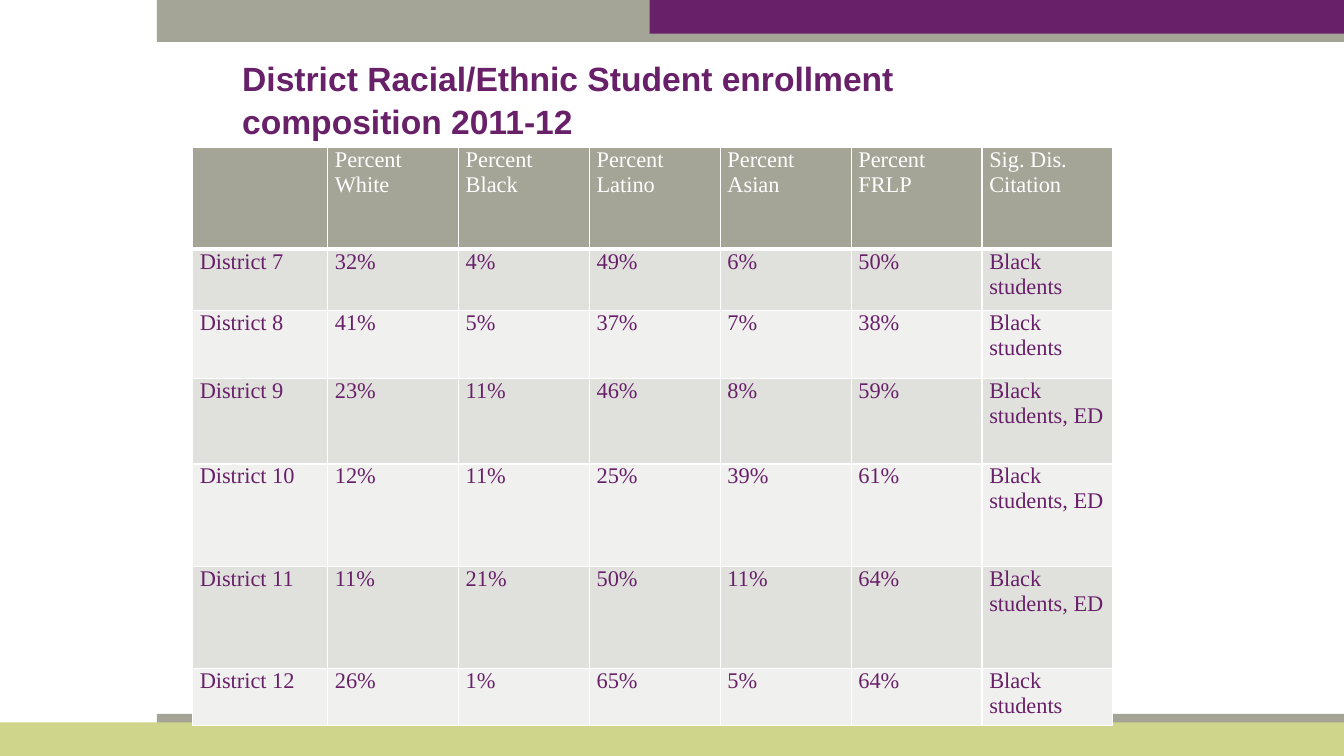
from lxml.etree import SubElement
from pptx import Presentation
from pptx.dml.color import RGBColor
from pptx.enum.shapes import MSO_SHAPE
from pptx.enum.text import MSO_ANCHOR, MSO_AUTO_SIZE, PP_ALIGN
from pptx.oxml.ns import qn
from pptx.util import Pt

GRAY, PLUM, LIME, WHITE = "A4A597", "682069", "CFD58B", "FFFFFF"
BANDS = ["E0E1DD", "F0F0EF"]
WIDE, HIGH = 960, 540

HEAD = ["", "Percent White", "Percent Black", "Percent Latino",
        "Percent Asian", "Percent FRLP", "Sig. Dis.\nCitation"]
ROWS = [
    ["District 7", "32%", "4%", "49%", "6%", "50%", "Black students"],
    ["District 8", "41%", "5%", "37%", "7%", "38%", "Black students"],
    ["District 9", "23%", "11%", "46%", "8%", "59%", "Black students, ED"],
    ["District 10", "12%", "11%", "25%", "39%", "61%", "Black students, ED"],
    ["District 11", "11%", "21%", "50%", "11%", "64%", "Black students, ED"],
    ["District 12", "26%", "1%", "65%", "5%", "64%", "Black students"],
]
COLS = [96.5] + [93.5] * 6
TALL = [72.7, 43.5, 48.6, 61.3, 73, 73, 41]


def paint(code):
    return RGBColor.from_string(code)


def write(frame, text, font="Times New Roman", size=16, color=PLUM, bold=False, lead=None):
    frame.word_wrap = True
    frame.text = text
    for para in frame.paragraphs:
        para.alignment = PP_ALIGN.LEFT
        para.line_spacing = lead
        for run in para.runs:
            run.font.name, run.font.size = font, Pt(size)
            run.font.bold, run.font.color.rgb = bold, paint(color)


def bar(slide, left, top, width, height, color):
    shape = slide.shapes.add_shape(MSO_SHAPE.RECTANGLE, Pt(left), Pt(top), Pt(width), Pt(height))
    shape.shadow.inherit = False
    shape.fill.solid()
    shape.fill.fore_color.rgb = paint(color)
    shape.line.fill.background()


def frieze(slide, left, top, width, height):
    """Draw the colour bars along the top and bottom of the slide."""
    inset, split, thick, thin = 112, 464, 30, 24
    for y in (top, top + height - thick):
        bar(slide, left + inset, y, width - inset, thick, GRAY)
    bar(slide, left, top + height - thin, width, thin, LIME)
    bar(slide, left + split, top, width - split, thin, PLUM)


def title(slide, left, top, width, height):
    box = slide.shapes.title
    box.left, box.top, box.width, box.height = Pt(left), Pt(top), Pt(width), Pt(height)
    frame = box.text_frame
    frame.margin_left = frame.margin_right = frame.margin_top = frame.margin_bottom = 0
    frame.vertical_anchor = MSO_ANCHOR.TOP
    frame.auto_size = MSO_AUTO_SIZE.NONE
    write(frame, "District Racial/Ethnic Student enrollment composition 2011-12",
          font="Arial", size=24, bold=True, lead=1.06)


def edge(cell, foot):
    """Give a cell white borders, with the bottom one foot points thick."""
    props = cell._tc.get_or_add_tcPr()
    for side, thick in zip("LRTB", (1, 1, 1, foot)):
        line = SubElement(props, qn("a:ln" + side), w=str(Pt(thick)))
        fill = SubElement(line, qn("a:solidFill"))
        SubElement(fill, qn("a:srgbClr"), val=WHITE)


def grid(slide, left, top, width, height):
    data = [HEAD] + ROWS
    table = slide.shapes.add_table(len(data), len(HEAD), Pt(left), Pt(top),
                                   Pt(width), Pt(height)).table
    for col, size in zip(table.columns, COLS):
        col.width = Pt(size)
    for r, (row, texts) in enumerate(zip(table.rows, data)):
        row.height = Pt(TALL[r])
        back = BANDS[(r - 1) % 2] if r else GRAY
        for cell, text in zip(row.cells, texts):
            edge(cell, 1 if r else 3)
            cell.margin_left = cell.margin_right = Pt(5.2)
            cell.margin_top = cell.margin_bottom = 0
            cell.fill.solid()
            cell.fill.fore_color.rgb = paint(back)
            write(cell.text_frame, text, color=PLUM if r else WHITE)


def main():
    deck = Presentation()
    deck.slide_width, deck.slide_height = Pt(WIDE), Pt(HIGH)
    slide = deck.slides.add_slide(deck.slide_layouts[5])
    frieze(slide, 0, 0, WIDE, HIGH)
    title(slide, 173, 39.6, 600, 66)
    grid(slide, 137.5, 105.4, sum(COLS), sum(TALL))
    deck.save("out.pptx")


if __name__ == "__main__":
    main()
